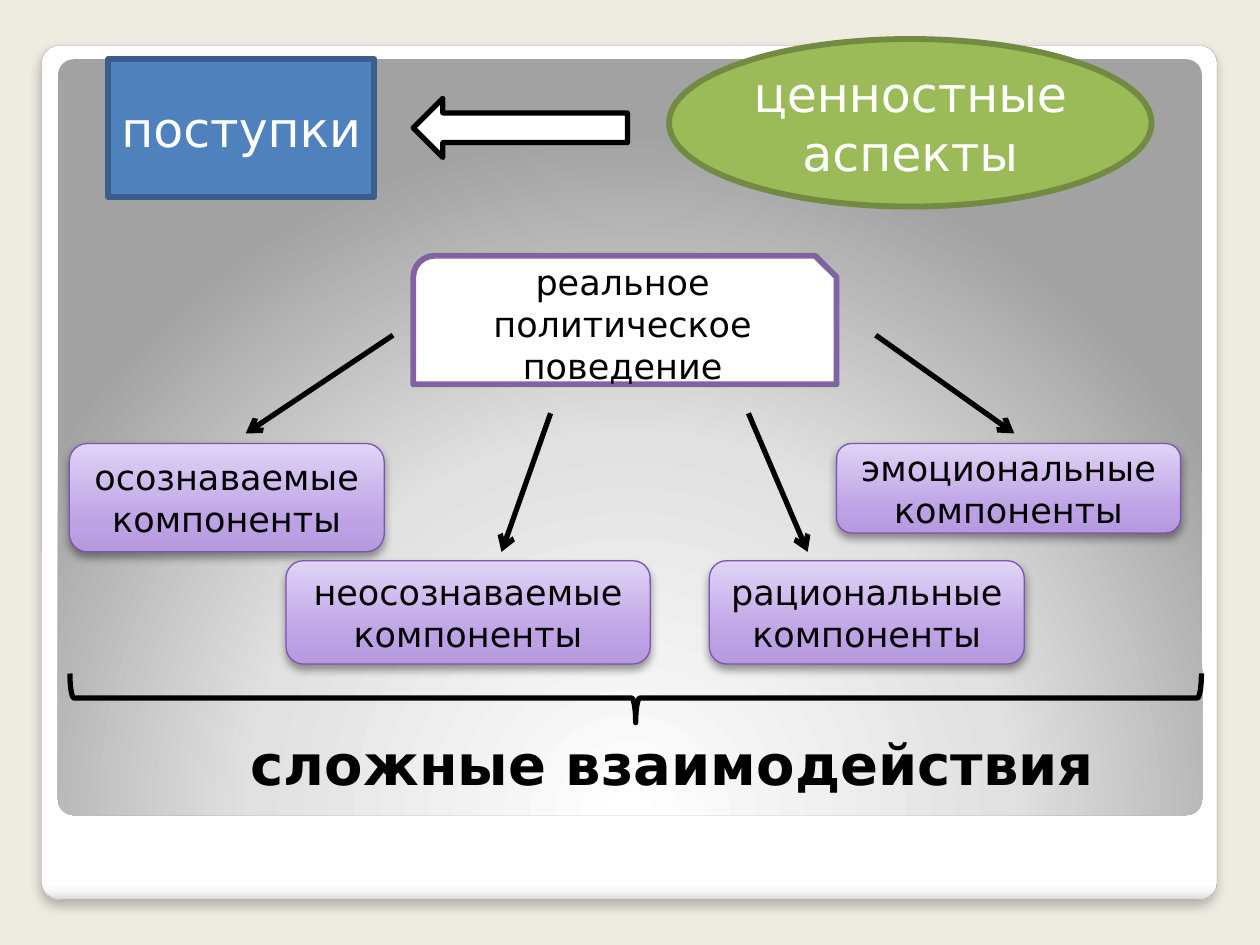
from lxml import etree
from pptx import Presentation
from pptx.dml.color import RGBColor
from pptx.enum.shapes import MSO_CONNECTOR as CONN, MSO_SHAPE as SHAPE
from pptx.enum.text import MSO_ANCHOR, MSO_AUTO_SIZE, PP_ALIGN
from pptx.oxml import parse_xml
from pptx.oxml.ns import qn
from pptx.util import Inches, Pt

NS = 'xmlns:a="http://schemas.openxmlformats.org/drawingml/2006/main"'
FONT = "DejaVu Sans"
C = {
    "bg": "EEECE1", "white": "FFFFFF", "black": "000000", "frame": "A4A4A4",
    "blue": "4F81BD", "blue_line": "3A5F8C", "green": "9BBB59",
    "green_line": "738A42", "violet": "8064A2", "box_line": "7E54B2",
}
# Gradients: stops and direction; shadows: opacity, blur, distance
LINEAR = '<a:lin ang="{}" scaled="0"/>'
GRADIENTS = {
    "frame": ([(0, "FFFFFF"), (98, "FFFFFF"), (99, "F7F7F7"), (100, "DADADA")],
              LINEAR.format(90 * 60000)),
    "panel": ([(0, "FFFFFF"), (55, "E1E1E1"), (100, "A2A2A2")],
              '<a:path path="circle"><a:fillToRect l="50000" t="175000" '
              'r="50000" b="-75000"/></a:path>'),
    "box": ([(0, "B59ADE"), (25, "BCA1E4"), (100, "E0D3F6")],
            LINEAR.format(270 * 60000)),
}
SHADOWS = {"frame": (25, 6, 4), "box": (40, 5.2, 3)}

prs = Presentation()
prs.slide_width, prs.slide_height = Inches(10), Inches(7.5)
s = prs.slides.add_slide(prs.slide_layouts[6])
s.background.fill.solid()
s.background.fill.fore_color.rgb = RGBColor.from_string(C["bg"])


def add_shape(kind, at, fill=None, line=None, width=3, adj=None):
    """Add a preset shape; fill is a colour or gradient name."""
    sp = s.shapes.add_shape(kind, *map(Inches, at))
    sp.shadow.inherit = False
    if adj is not None:
        sp.adjustments[0] = adj
    if fill in GRADIENTS:
        stops, direction = GRADIENTS[fill]
        gs = "".join(f'<a:gs pos="{pos * 1000}"><a:srgbClr val="{rgb}"/></a:gs>'
                     for pos, rgb in stops)
        sp._element.spPr.insert(2, parse_xml(
            f'<a:gradFill {NS} rotWithShape="1"><a:gsLst>{gs}</a:gsLst>{direction}</a:gradFill>'))
    elif fill:
        sp.fill.solid()
        sp.fill.fore_color.rgb = RGBColor.from_string(C[fill])
    else:
        sp.fill.background()
    if line:
        sp.line.color.rgb = RGBColor.from_string(C[line])
        sp.line.width = Pt(width)
    else:
        sp.line.fill.background()
    if fill in SHADOWS:
        alpha, blur, dist = SHADOWS[fill]
        sp._element.spPr.find(qn("a:effectLst")).append(parse_xml(
            f'<a:outerShdw {NS} blurRad="{Pt(blur)}" dist="{Pt(dist)}" dir="5400000" '
            f'rotWithShape="0"><a:srgbClr val="000000"><a:alpha val="{alpha * 1000}"/>'
            '</a:srgbClr></a:outerShdw>'))
    return sp


def write(sp, text, align=PP_ALIGN.CENTER, color="black", **font):
    """Put one formatted paragraph into a shape."""
    p = sp.text_frame.paragraphs[0]
    p.alignment = align
    r = p.add_run()
    r.text = text
    r.font.color.rgb = RGBColor.from_string(C[color])
    for name, value in {"name": FONT, "size": Pt(20), **font}.items():
        setattr(r.font, name, value)


# Framed background
add_shape(SHAPE.ROUNDED_RECTANGLE, (0.33, 0.36, 9.33, 6.78), "frame", "frame", 0.16, 0.021)
add_shape(SHAPE.ROUNDED_RECTANGLE, (0.46, 0.47, 9.08, 6), "panel", adj=0.021)

# Top row: values lead to actions
add_shape(SHAPE.LEFT_ARROW, (3.28, 0.78, 1.7, 0.47), "white", "black")

# Labelled shapes
BOX = (SHAPE.ROUNDED_RECTANGLE, "box", "box_line", 0.75)
for text, at, (kind, fill, line, width), font in [
    ("поступки", (0.86, 0.47, 2.11, 1.09),
     (SHAPE.FLOWCHART_PROCESS, "blue", "blue_line", 3.35), {"color": "white", "size": Pt(28)}),
    ("ценностные аспекты", (5.31, 0.31, 3.83, 1.33),
     (SHAPE.OVAL, "green", "green_line", 3.35), {"color": "white", "size": Pt(28)}),
    ("реальное политическое поведение", (3.28, 2.03, 3.36, 1.02),
     (SHAPE.SNIP_ROUND_RECTANGLE, "white", "violet", 3.35), {}),
    ("осознаваемые компоненты", (0.55, 3.52, 2.5, 0.86), BOX, {}),
    ("неосознаваемые компоненты", (2.27, 4.45, 2.89, 0.82), BOX, {}),
    ("рациональные компоненты", (5.63, 4.45, 2.5, 0.82), BOX, {}),
    ("эмоциональные компоненты", (6.64, 3.52, 2.73, 0.71), BOX, {}),
]:
    sp = add_shape(kind, at, fill, line, width)
    sp.text_frame.word_wrap = True
    sp.text_frame.vertical_anchor = MSO_ANCHOR.MIDDLE
    write(sp, text, **font)

# Arrows from behaviour to its components
for ends in [(3.12, 2.66, 1.95, 3.44), (4.37, 3.28, 3.98, 4.38),
             (5.94, 3.28, 6.41, 4.38), (6.95, 2.66, 8.05, 3.44)]:
    cn = s.shapes.add_connector(CONN.STRAIGHT, *map(Inches, ends))
    cn.line.color.rgb = RGBColor.from_string(C["black"])
    cn.line.width = Pt(3)
    etree.SubElement(cn.line._get_or_add_ln(), qn("a:tailEnd"), type="arrow")
    etree.SubElement(cn._element.spPr, qn("a:effectLst"))

# Brace and conclusion
add_shape(SHAPE.LEFT_BRACE, (4.85, 1.05, 0.39, 8.98), line="black").rotation = 270
tb = s.shapes.add_textbox(*map(Inches, (1.89, 5.74, 6.99, 0.64)))
tb.text_frame.word_wrap = False
tb.text_frame.auto_size = MSO_AUTO_SIZE.SHAPE_TO_FIT_TEXT
write(tb, "сложные взаимодействия", PP_ALIGN.LEFT, size=Pt(32), bold=True)

prs.save("out.pptx")
